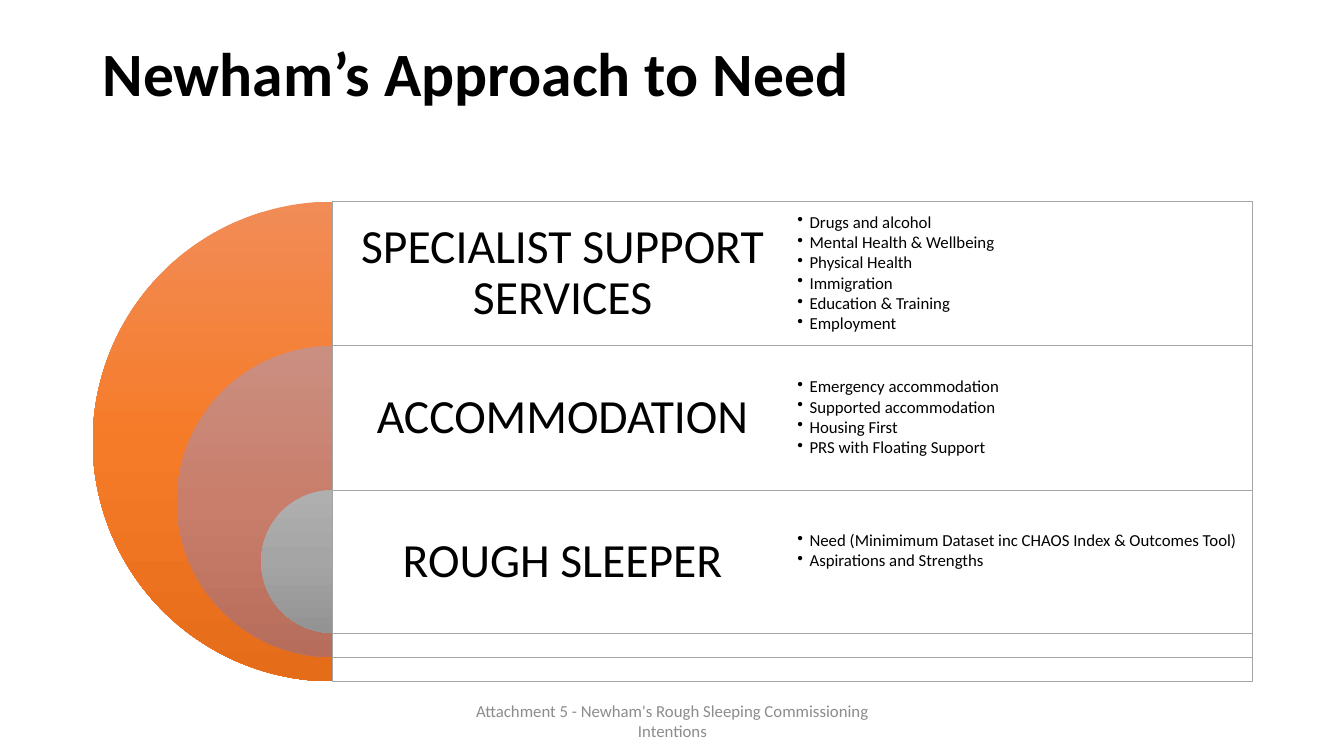
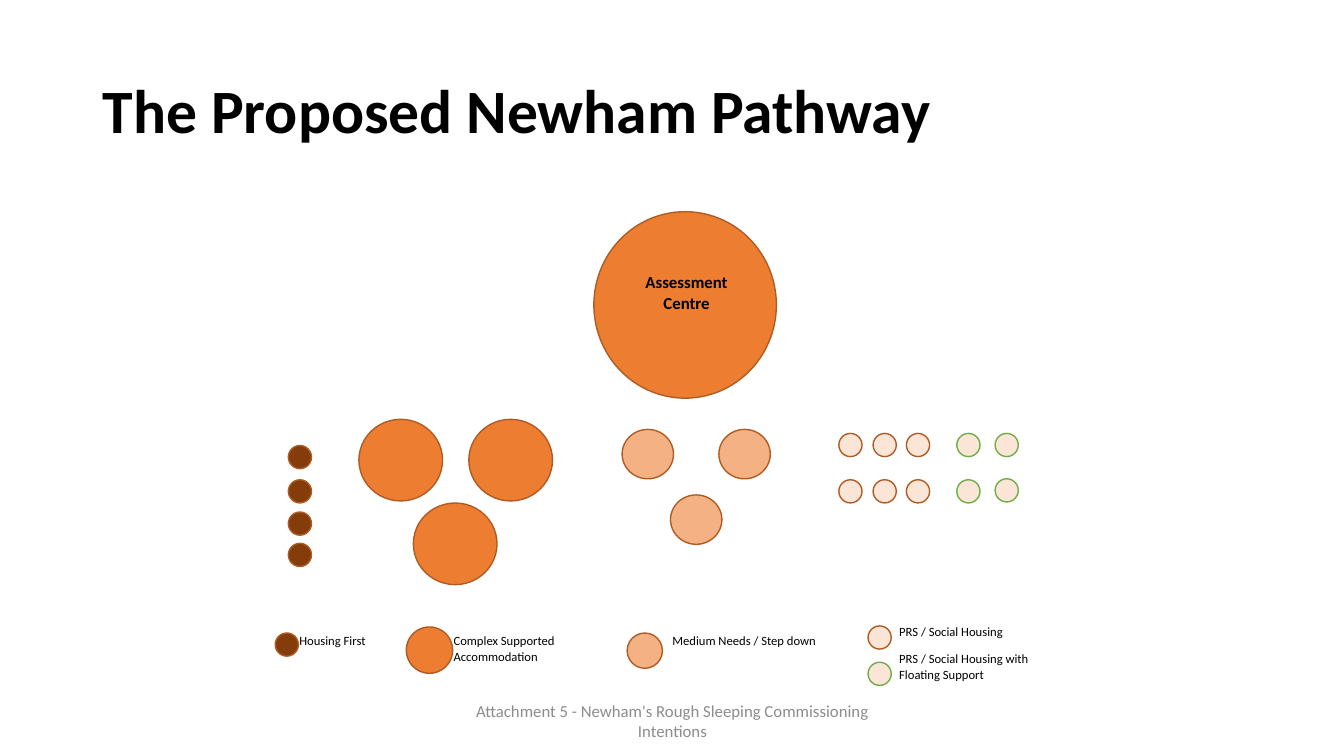
from copy import deepcopy

from pptx import Presentation
from pptx.dml.color import RGBColor
from pptx.enum.shapes import MSO_SHAPE
from pptx.enum.text import MSO_ANCHOR, PP_ALIGN
from pptx.oxml.ns import qn
from pptx.util import Pt

PX = 9144
FONT = "Calibri"
PIE, RECTANGLE, OVAL = MSO_SHAPE.PIE, MSO_SHAPE.RECTANGLE, MSO_SHAPE.OVAL
TOP, MIDDLE = MSO_ANCHOR.TOP, MSO_ANCHOR.MIDDLE
LEFT, CENTER = PP_ALIGN.LEFT, PP_ALIGN.CENTER

COLOURS = {
    "text": "000000", "footer": "8C8C8C", "row": "FFFFFF", "row edge": "A5A5A5",
    "orange": "ED7D31", "rust": "AF5C24", "brown": "843C0B",
    "peach": "F4B183", "cream": "FBE5D6", "green": "70AD47",
}

FOOTER = "Attachment 5 - Newham's Rough Sleeping Commissioning Intentions"

NEED_TITLE = "Newham’s Approach to Need"
NEED_LAYERS = [
    {"name": "SPECIALIST SUPPORT SERVICES", "shades": ("F18C57", "F67B28", "E56C19"),
     "points": ["Drugs and alcohol", "Mental Health & Wellbeing", "Physical Health",
                "Immigration", "Education & Training", "Employment"],
     "lift": 0},
    {"name": "ACCOMMODATION", "shades": ("CB8F81", "C97E6B", "B76D5B"),
     "points": ["Emergency accommodation", "Supported accommodation",
                "Housing First", "PRS with Floating Support"],
     "lift": 0},
    {"name": "ROUGH SLEEPER", "shades": ("AFAFAF", "A5A5A5", "939393"),
     "points": ["Need (Minimimum Dataset inc CHAOS Index & Outcomes Tool)",
                "Aspirations and Strengths"],
     "lift": 21},
]
LAYERS_TOP, LAYERS_LEFT, LAYERS_WIDTH = 200, 330, 912
OUTER_SIZE, ROW_HEIGHT, SIZE_STEP = 476, 143, 167

PATHWAY_TITLE = "The Proposed Newham Pathway"
CENTRE_NAME = "Assessment Centre"
KINDS = {
    "assessment": ("orange", "rust"),
    "housing first": ("brown", "rust"),
    "complex": ("orange", "rust"),
    "medium": ("peach", "rust"),
    "social": ("cream", "rust"),
    "floating": ("cream", "green"),
}
HOMES = [
    ("assessment", 181, 185, [(589, 210)]),
    ("housing first", 23, 23, [(286, y) for y in (442, 476, 508, 539)]),
    ("complex", 83, 81, [(356, 416), (465, 416), (410, 499)]),
    ("medium", 51, 49, [(617, 426), (713, 426), (665, 491)]),
    ("social", 23, 23, [(x, y) for y in (430, 476) for x in (832, 866, 899)]),
    ("floating", 23, 23, [(949, 430), (987, 430), (949, 476), (987, 475)]),
]
LEGEND = [
    ("housing first", (273, 628), 23, "Housing First", (287, 622, 152, 46)),
    ("complex", (403, 622), 46, "Complex Supported Accommodation", (440, 622, 171, 70)),
    ("medium", (622, 628), 35, "Medium Needs / Step down", (657, 622, 175, 70)),
    ("social", (861, 621), 23, "PRS / Social Housing", (882, 613, 175, 44)),
    ("floating", (861, 657), 23, "PRS / Social Housing with Floating Support",
     (882, 640, 175, 79)),
]


def rgb(hex_code):
    return RGBColor.from_string(hex_code)


def add_text(slide, box, lines, size, colour="text", bold=False, align=LEFT,
             anchor=TOP, spacing=1.0, after=0, insets=(10, 5, 10, 5), bullet=False):
    frame = slide.shapes.add_textbox(*(v * PX for v in box)).text_frame
    frame.word_wrap = True
    frame.vertical_anchor = anchor
    (frame.margin_left, frame.margin_top,
     frame.margin_right, frame.margin_bottom) = (v * PX for v in insets)
    for index, line in enumerate(lines):
        paragraph = frame.add_paragraph() if index else frame.paragraphs[0]
        paragraph.alignment = align
        paragraph.line_spacing = spacing
        paragraph.space_after = Pt(after)
        if bullet:
            properties = paragraph._p.get_or_add_pPr()
            properties.set("marL", str(12 * PX))
            properties.set("indent", str(-12 * PX))
            mark = properties.makeelement(qn("a:buChar"), {"char": "•"})
            properties.append(mark)
        run = paragraph.add_run()
        run.text = line
        run.font.name = FONT
        run.font.size = Pt(size)
        run.font.bold = bold
        run.font.color.rgb = rgb(COLOURS[colour])


def add_figure(slide, preset, box, fill=None, edge=None, weight=1):
    figure = slide.shapes.add_shape(preset, *(round(v * PX) for v in box))
    figure.shadow.inherit = False
    if fill:
        figure.fill.solid()
        figure.fill.fore_color.rgb = rgb(COLOURS[fill])
    if edge:
        figure.line.color.rgb = rgb(COLOURS[edge])
        figure.line.width = Pt(weight)
    else:
        figure.line.fill.background()
    return figure


def shade_downwards(figure, shades):
    figure.fill.gradient()
    figure.fill.gradient_angle = 270
    stop_list = figure._element.spPr.find(".//" + qn("a:gsLst"))
    stop_list.append(deepcopy(stop_list[0]))
    for index, (stop, shade) in enumerate(zip(figure.fill.gradient_stops, shades)):
        stop.color.rgb = rgb(shade)
        stop.position = index / 2


def add_page(deck, title, title_height):
    slide = deck.slides.add_slide(deck.slide_layouts[6])
    add_text(slide, (92, 40, 1150, title_height), [title], 44, bold=True,
             anchor=MIDDLE, spacing=0.9)
    add_text(slide, (442, 695, 450, 40), [FOOTER], 12, "footer",
             align=CENTER, anchor=MIDDLE)
    return slide


def build_need(deck):
    slide = add_page(deck, NEED_TITLE, 72)
    column = LAYERS_WIDTH // 2
    for index, layer in enumerate(NEED_LAYERS):
        top = LAYERS_TOP + index * ROW_HEIGHT
        size = OUTER_SIZE - index * SIZE_STEP
        half_disc = add_figure(slide, PIE, (LAYERS_LEFT - size / 2, top, size, size))
        half_disc.adjustments[0] = 54
        half_disc.adjustments[1] = 162
        shade_downwards(half_disc, layer["shades"])
        add_figure(slide, RECTANGLE, (LAYERS_LEFT, top, LAYERS_WIDTH, size),
                   "row", "row edge", 0.5)
        add_text(slide, (LAYERS_LEFT, top, column, ROW_HEIGHT), [layer["name"]], 34,
                 align=CENTER, anchor=MIDDLE, spacing=0.9, insets=(14,) * 4)
        add_text(slide, (LAYERS_LEFT + column, top, column, ROW_HEIGHT),
                 layer["points"], 12, anchor=MIDDLE, spacing=0.9, after=1.6,
                 insets=(5, 5, 5, 5 + layer["lift"]), bullet=True)


def build_pathway(deck):
    slide = add_page(deck, PATHWAY_TITLE, 145)
    for kind, width, height, places in HOMES:
        for place in places:
            add_figure(slide, OVAL, (*place, width, height), *KINDS[kind])
    add_text(slide, (611, 263, 140, 70), [CENTRE_NAME], 12, bold=True,
             align=CENTER, spacing=1.07)
    for kind, place, size, label, label_box in LEGEND:
        add_figure(slide, OVAL, (*place, size, size), *KINDS[kind])
        add_text(slide, label_box, [label], 9, spacing=1.06)


def main():
    deck = Presentation()
    deck.slide_width = 1333 * PX
    deck.slide_height = 750 * PX
    build_need(deck)
    build_pathway(deck)
    deck.save("out.pptx")


if __name__ == "__main__":
    main()
